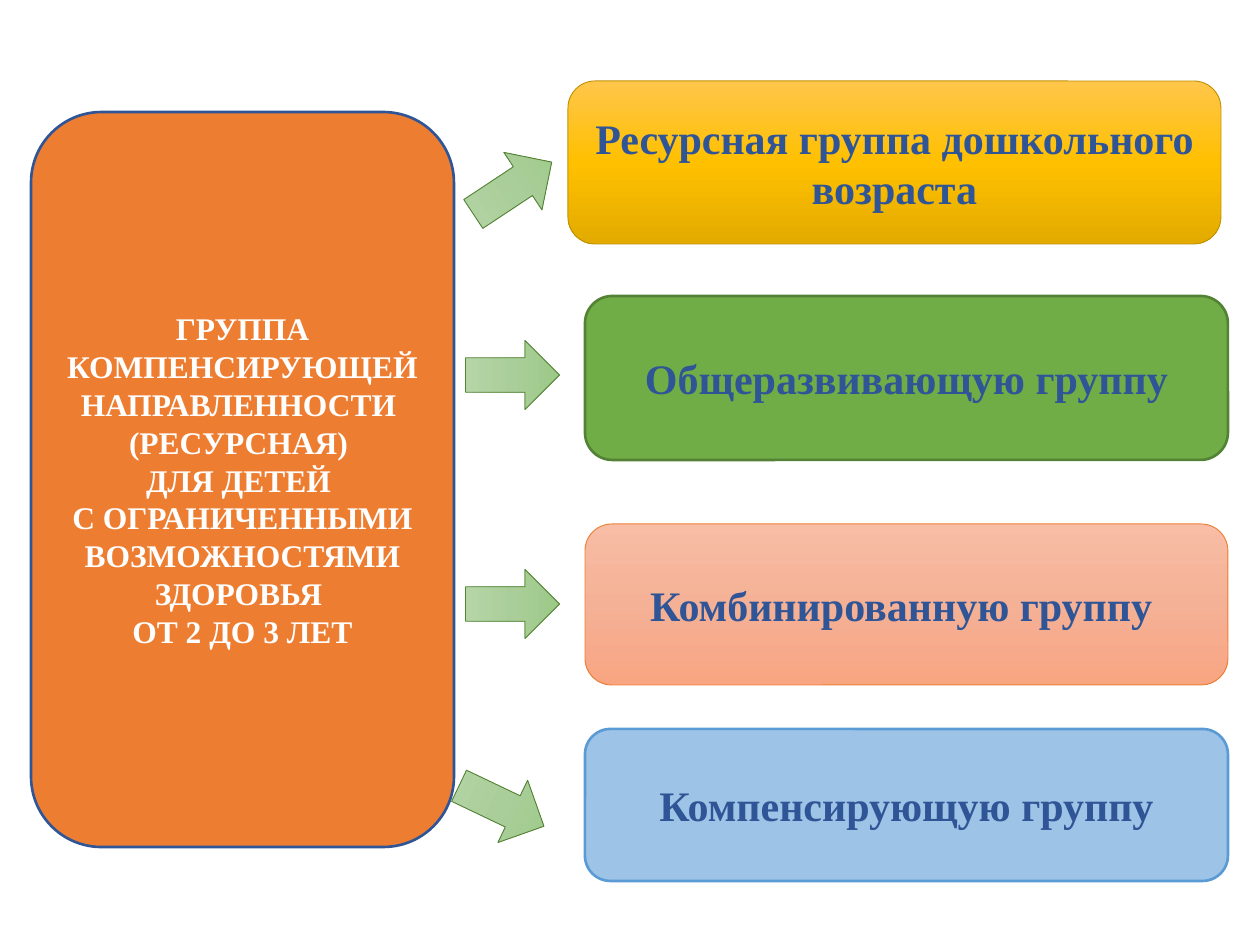
"""Build a slide linking the resource group for toddlers to four kinds of preschool group."""
from copy import deepcopy

from pptx import Presentation
from pptx.dml.color import RGBColor
from pptx.enum.shapes import MSO_SHAPE as Shape
from pptx.enum.text import MSO_ANCHOR as Anchor, PP_ALIGN as Align
from pptx.oxml.ns import qn
from pptx.util import Pt

PX = 914400 / 126
FONT = "Times New Roman"
NAVY, ORANGE, GREEN, WHITE = "2F5597", "ED7D31", "548235", "FFFFFF"
ARROW_COLORS = ["B5D5A7", "AACE9A", "9CC987"]


def add_block(kind, place, colors, line_color, line_width):
    """Add a shape with a solid fill, or a three-stop vertical gradient."""
    block = slide.shapes.add_shape(kind, *[round(v * PX) for v in place])
    block.shadow.inherit = False
    if len(colors) == 1:
        block.fill.solid()
        block.fill.fore_color.rgb = RGBColor.from_string(colors[0])
    else:
        block.fill.gradient()
        block.fill.gradient_angle = 270
        first = next(block._element.spPr.iter(qn("a:gs")))
        first.addnext(deepcopy(first))
        for stop, color, position in zip(block.fill.gradient_stops, colors, (0, 0.5, 1)):
            stop.color.rgb = RGBColor.from_string(color)
            stop.position = position
    block.line.color.rgb = RGBColor.from_string(line_color)
    block.line.width = Pt(line_width)
    return block


def write(block, paragraphs, size, color):
    """Write centred bold paragraphs, each a list of lines."""
    frame = block.text_frame
    frame.word_wrap = True
    frame.vertical_anchor = Anchor.MIDDLE
    for index, lines in enumerate(paragraphs):
        para = frame.add_paragraph() if index else frame.paragraphs[0]
        para.alignment = Align.CENTER
        for number, line in enumerate(lines):
            if number:
                para.add_line_break()
            span = para.add_run()
            span.text = line
            span.font.name = FONT
            span.font.size = Pt(size)
            span.font.bold = True
            span.font.color.rgb = RGBColor.from_string(color)


deck = Presentation()
deck.slide_width, deck.slide_height = round(1260 * PX), round(945 * PX)
slide = deck.slides.add_slide(deck.slide_layouts[6])

groups = [
    ("Ресурсная группа дошкольного возраста", (568, 81, 653, 163),
     ["FFC64B", "FFC000", "E3AB00"], "BF9000", 0.5),
    ("Общеразвивающую группу", (585, 296, 643, 164), ["70AD47"], GREEN, 1.5),
    ("Комбинированную группу ", (585, 524, 643, 161),
     ["F7BDA5", "F5B196", "F8A582"], ORANGE, 0.5),
    ("Компенсирующую группу", (585, 729, 643, 152), ["9DC3E6"], "5B9BD5", 1.5),
]
for label, place, colors, line_color, line_width in groups:
    box = add_block(Shape.ROUNDED_RECTANGLE, place, colors, line_color, line_width)
    write(box, [[label]], 24, NAVY)

panel = add_block(Shape.ROUNDED_RECTANGLE, (31, 112, 423, 735), [ORANGE], NAVY, 1.5)
write(panel, [
    ["ГРУППА КОМПЕНСИРУЮЩЕЙ НАПРАВЛЕННОСТИ ", "(РЕСУРСНАЯ) "],
    ["ДЛЯ ДЕТЕЙ "],
    ["С ОГРАНИЧЕННЫМИ ВОЗМОЖНОСТЯМИ ЗДОРОВЬЯ ", "ОТ 2 ДО 3 ЛЕТ"],
], 18, WHITE)

for left, top, angle in [(478, 141, 236.5), (478, 328, 270), (478, 557, 270), (467, 759, 295.5)]:
    arrow = add_block(Shape.DOWN_ARROW, (left, top, 69, 94), ARROW_COLORS, GREEN, 0.5)
    arrow.rotation = angle

deck.save("out.pptx")
